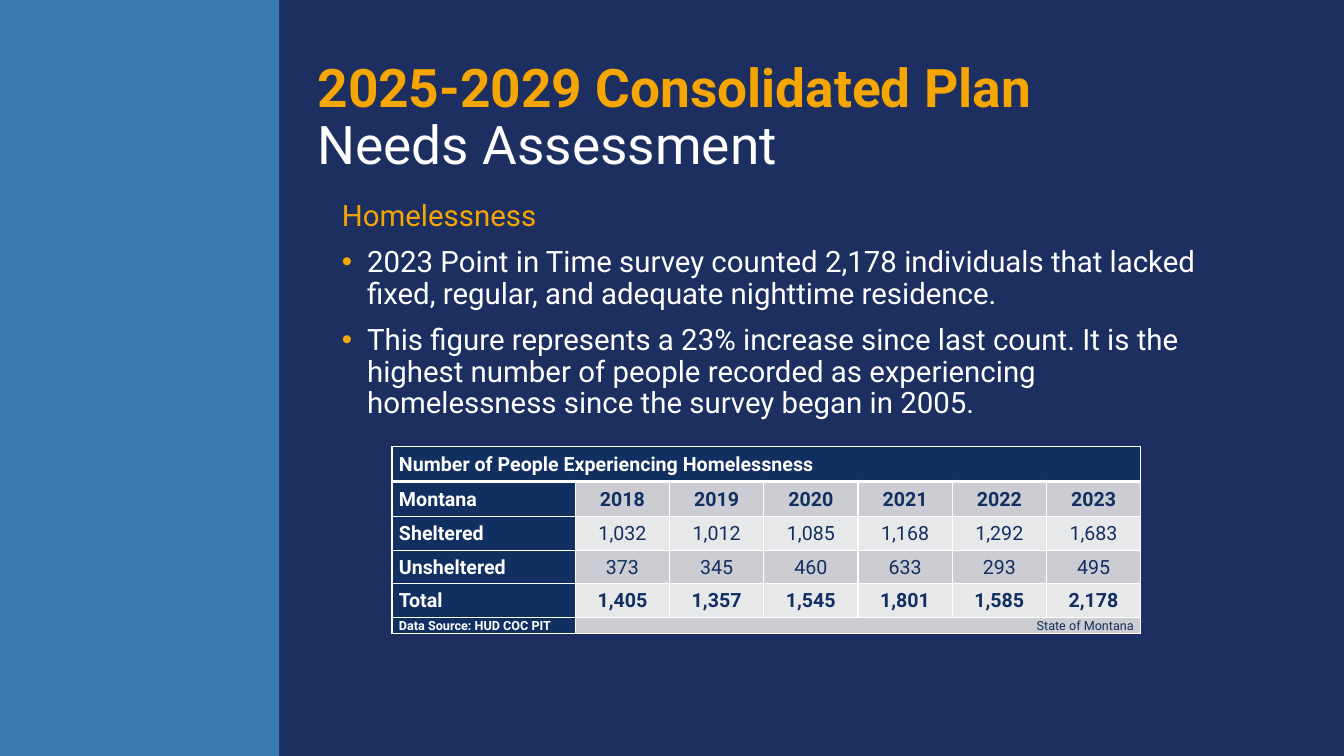
from lxml import etree
from pptx import Presentation
from pptx.dml.color import RGBColor
from pptx.enum.shapes import MSO_SHAPE
from pptx.enum.text import MSO_ANCHOR, PP_ALIGN
from pptx.oxml.ns import qn
from pptx.util import Pt

NAVY = RGBColor(0x1C, 0x2F, 0x60)
INK = RGBColor(0x11, 0x2F, 0x60)
BLUE = RGBColor(0x3A, 0x7A, 0xB2)
GOLD = RGBColor(0xF5, 0xA6, 0x03)
WHITE = RGBColor(0xFF, 0xFF, 0xFF)
GREY = RGBColor(0xCC, 0xCD, 0xD2)
PALE = RGBColor(0xE7, 0xE8, 0xEA)
FONT = "Roboto"

POINTS = [
    "2023 Point in Time survey counted 2,178 individuals that lacked "
    "fixed, regular, and adequate nighttime residence.",
    "This figure represents a 23% increase since last count. It is the "
    "highest number of people recorded as experiencing homelessness "
    "since the survey began in 2005.",
]
ROWS = [
    ["Number of People Experiencing Homelessness"],
    ["Montana", "2018", "2019", "2020", "2021", "2022", "2023"],
    ["Sheltered", "1,032", "1,012", "1,085", "1,168", "1,292", "1,683"],
    ["Unsheltered", "373", "345", "460", "633", "293", "495"],
    ["Total", "1,405", "1,357", "1,545", "1,801", "1,585", "2,178"],
    ["Data Source: HUD COC PIT", "State of Montana"],
]
HEIGHTS = [25, 25, 24, 24, 24, 11]
LABEL, YEAR = 131, 67.3
BOLD = (1, 4)


def style(font, size, color, bold=False):
    font.name, font.size, font.bold = FONT, Pt(size), bold
    font.color.rgb = color


def place(shape, left, top, width, height):
    shape.left, shape.top = Pt(left), Pt(top)
    shape.width, shape.height = Pt(width), Pt(height)


def add_bar(slide):
    bar = slide.shapes.add_shape(MSO_SHAPE.RECTANGLE, 0, 0, Pt(199.5), Pt(540))
    bar.shadow.inherit = False
    bar.fill.solid()
    bar.fill.fore_color.rgb = BLUE
    bar.line.fill.background()
    slide.shapes.title.element.addprevious(bar.element)


def fill_title(title):
    place(title, 219.6, 21, 648, 128)
    frame = title.text_frame
    frame.text = "2025-2029 Consolidated Plan\vNeeds Assessment"
    frame.vertical_anchor = MSO_ANCHOR.MIDDLE
    line = frame.paragraphs[0]
    line.alignment, line.line_spacing = PP_ALIGN.LEFT, 0.9
    plan, needs = line.runs
    style(plan.font, 38, GOLD, True)
    style(needs.font, 38, WHITE)


def set_bullet(para, mark):
    """Give the paragraph a gold bullet, or none if mark is empty."""
    props = para._p.get_or_add_pPr()
    step = Pt(18) if mark else 0
    props.set("marL", str(step))
    props.set("indent", str(-step))
    if not mark:
        etree.SubElement(props, qn("a:buNone"))
        return
    tint = etree.SubElement(props, qn("a:buClr"))
    etree.SubElement(tint, qn("a:srgbClr"), val=str(GOLD))
    etree.SubElement(props, qn("a:buFont"), typeface="Arial")
    etree.SubElement(props, qn("a:buChar"), char=mark)


def fill_body(body):
    place(body, 237, 140.4, 648, 366)
    frame = body.text_frame
    frame.text = "\n".join(["Homelessness"] + POINTS)
    for i, para in enumerate(frame.paragraphs):
        set_bullet(para, "•" if i else "")
        para.line_spacing = 0.9
        para.space_before = Pt(10 if i else 0)
        style(para.runs[0].font, 21, WHITE if i else GOLD)


def set_border(cell, side, width):
    props = cell._tc.get_or_add_tcPr()
    line = etree.SubElement(props, qn("a:ln" + side), w=str(Pt(width)))
    paint = etree.SubElement(line, qn("a:solidFill"))
    etree.SubElement(paint, qn("a:srgbClr"), val=str(WHITE))


def format_cell(cell, row, col):
    thick = {(0, "B"), (1, "T")}
    for side in "LRTB":
        set_border(cell, side, 3 if (row, side) in thick else 1)
    last = row == len(ROWS) - 1
    head = row == 0 or col == 0
    cell.fill.solid()
    cell.fill.fore_color.rgb = INK if head else GREY if row % 2 else PALE
    cell.margin_left = cell.margin_right = Pt(5)
    cell.margin_top = cell.margin_bottom = 0
    cell.vertical_anchor = MSO_ANCHOR.TOP if last and head else MSO_ANCHOR.MIDDLE
    para = cell.text_frame.paragraphs[0]
    para.line_spacing = 1.07
    para.alignment = (PP_ALIGN.LEFT if head else
                      PP_ALIGN.RIGHT if last else PP_ALIGN.CENTER)
    style(para.font, 9 if last else 14, WHITE if head else INK,
          head or row in BOLD)
    for run in para.runs:
        style(run.font, 9 if last else 14, WHITE if head else INK,
              head or row in BOLD)


def add_counts(slide):
    cols = len(ROWS[1])
    table = slide.shapes.add_table(
        len(ROWS), cols, Pt(280), Pt(319),
        Pt(LABEL + YEAR * (cols - 1)), Pt(sum(HEIGHTS))).table
    table.first_row = table.horz_banding = False
    for col, column in enumerate(table.columns):
        column.width = Pt(YEAR if col else LABEL)
    for row, words in enumerate(ROWS):
        table.rows[row].height = Pt(HEIGHTS[row])
        for col in range(cols):
            cell = table.cell(row, col)
            if col < len(words):
                cell.text = words[col]
            format_cell(cell, row, col)
        if len(words) < cols:
            start = table.cell(row, len(words) - 1)
            start.merge(table.cell(row, cols - 1))


def main():
    deck = Presentation()
    deck.slide_width, deck.slide_height = Pt(960), Pt(540)
    slide = deck.slides.add_slide(deck.slide_layouts[1])
    slide.background.fill.solid()
    slide.background.fill.fore_color.rgb = NAVY
    add_bar(slide)
    fill_title(slide.shapes.title)
    fill_body(slide.placeholders[1])
    add_counts(slide)
    deck.save("out.pptx")


if __name__ == "__main__":
    main()
